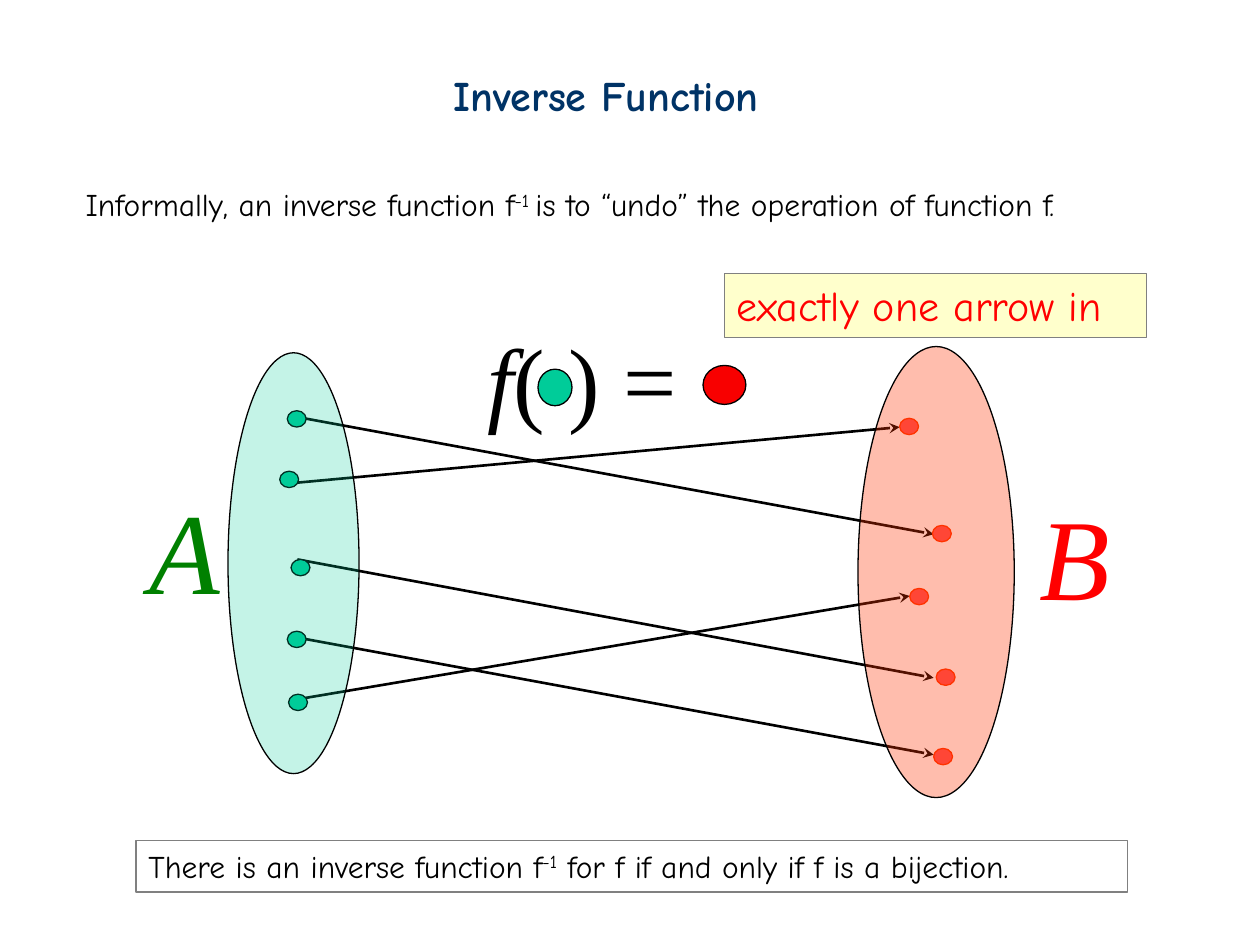
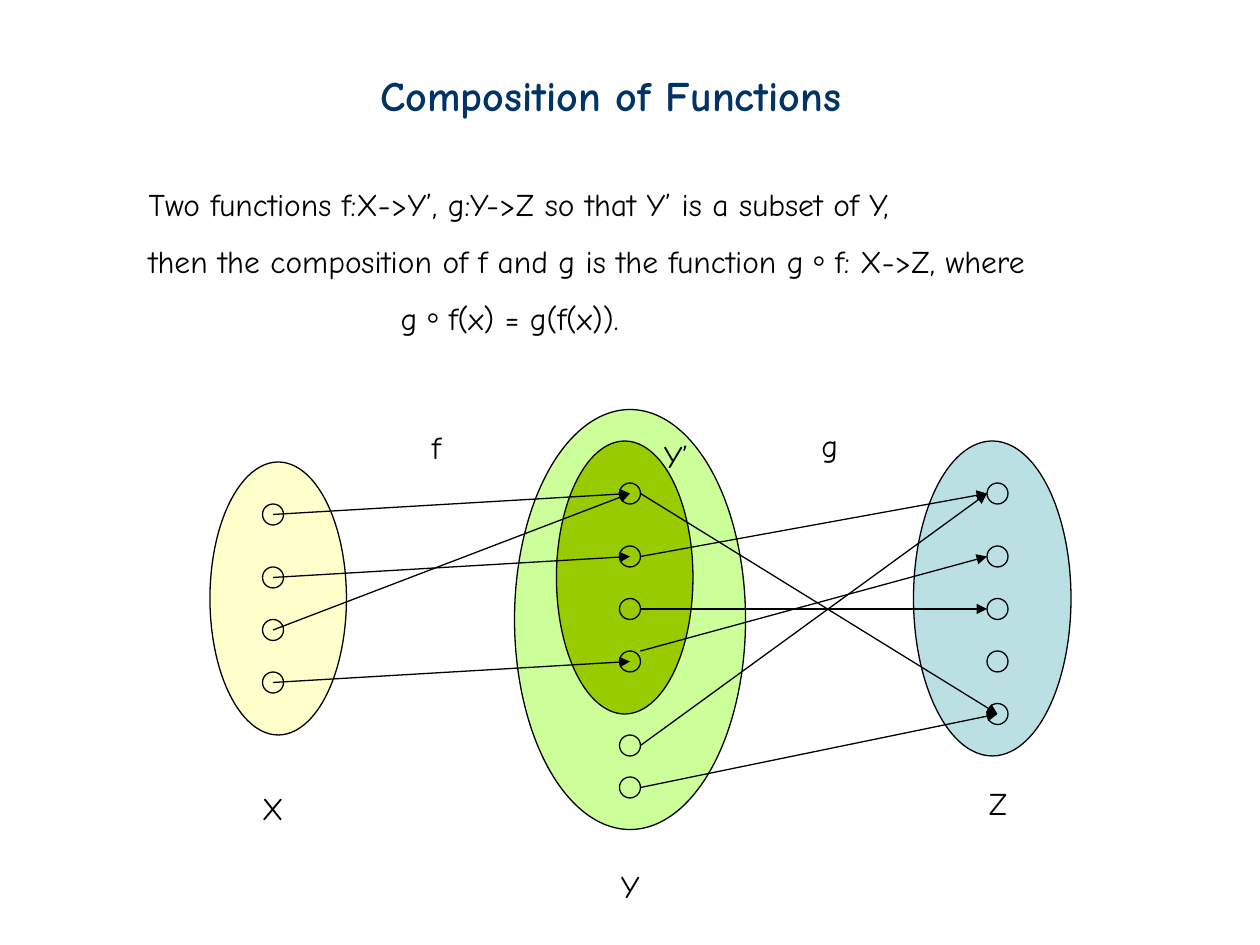
from pptx import Presentation
from pptx import util as u
from pptx.dml.color import RGBColor
from pptx.enum import shapes, text
from pptx.oxml.ns import qn
from lxml import etree

# ---- Shared look ----
COLORS = {
    "ink": "000000", "title": "003366", "edge": "808080", "note": "FFFFCC",
    "red": "FF0000", "value": "F80000", "dot_b": "FF5050", "set_b": "FF3300",
    "green": "008000", "set_a": "00CC99",
    "x": "FFFFCC", "y": "CCFF99", "y_sub": "99CC00", "z": "BBE0E3",
}
FONT, MATH = "Comic Neue", "Times New Roman"
BODY = {"name": FONT, "size": 18, "color": "ink"}
TITLE = {"name": FONT, "size": 24, "color": "title", "bold": True}
CALLOUT = {"name": FONT, "size": 24, "color": "red"}
FORMULA = {"name": MATH, "size": 54, "color": "ink"}
SET_NAME = {"name": MATH, "size": 66, "italic": True}
SUP = {"baseline": 30000}

# ---- Slide 1 content (inches) ----
INVERSE = {
    "title": "Inverse Function", "title_at": (3.5, 0.5, 2.88, 0.5),
    "body_at": (0.58, 1.42, 8.8, 0.4),
    "body": [{"runs": [("Informally, an inverse function f", {}), ("-1 ", SUP),
                       ("is to “undo” the operation of function f.", {})]}],
}
MAPPINGS = [((2.36, 3.31), (7.41, 4.24)), ((2.26, 3.84), (7.14, 3.39)),
            ((2.36, 4.44), (7.41, 5.38)), ((2.36, 5.06), (7.41, 5.99)),
            ((2.36, 5.55), (7.22, 4.73))]
DOT = (0.15, 0.13)
DOTS_A = [(2.28, 3.26), (2.22, 3.74), (2.31, 4.44), (2.28, 5.01), (2.29, 5.51)]
DOTS_B = [(7.14, 3.32), (7.22, 4.67), (7.4, 4.17), (7.43, 5.31), (7.41, 5.94)]
SETS_AB = [((1.81, 2.8, 1.04, 3.34), "set_a", 23), ((6.81, 2.75, 1.24, 3.58), "set_b", 32)]
NAMES_AB = [("A", (1.09, 3.75, 0.76, 1.2), "green"), ("B", (8.15, 3.8, 0.76, 1.2), "red")]
FORMULA_DOTS = [((4.27, 2.93, 0.27, 0.29), "set_a"), ((5.58, 2.9, 0.34, 0.31), "value")]
THEOREM = [("There is an inverse function f", {}), ("-1", SUP),
           (" for f if and only if f is a bijection.", {})]

# ---- Slide 2 content (diagram in grid cells, 12 to the inch) ----
COMPOSITION = {
    "title": "Composition of Functions", "title_at": (2.92, 0.5, 4.17, 0.5),
    "body_at": (1.08, 1.42, 7.78, 1.3),
    "body": [
        {"runs": [("Two functions f:X->Y’, g:Y->Z so that Y’ is a subset of Y,", {})]},
        {"runs": [("then the composition of f and g is the function g。f: X->Z, where", {})],
         "spacing": 1.5},
        {"runs": [("g。f(x) = g(f(x)).", {})], "spacing": 1.5, "indent": 2},
    ],
}
CELL = 12
SETS_XYZ = [("y", (49, 39, 22, 40)), ("x", (20, 44, 13, 26)),
            ("y_sub", (53, 42, 13, 26)), ("z", (87, 42, 15, 30))]
COLUMNS = {"x": (25, [48, 54, 59, 64]), "y": (59, [46, 52, 57, 62, 70, 74]),
           "z": (94, [46, 52, 57, 62, 67])}
F_ARROWS = [(0, 0), (1, 1), (2, 0), (3, 3)]
G_ARROWS = [(0, 4), (1, 0), (2, 2), (3, 1), (4, 0), (5, 4)]
LABELS = [("X", (1.98, 6.21, 0.38)), ("Y", (4.83, 6.83, 0.36)), ("Z", (7.75, 6.17, 0.38)),
          ("Y’", (5.17, 3.42, 0.4)), ("f", (3.33, 3.35, 0.33)), ("g", (6.42, 3.33, 0.33))]


# ---- Helpers ----
def rgb(name):
    return RGBColor.from_string(COLORS[name])


def place(sp, at):
    for side, value in zip(("left", "top", "width", "height"), at):
        setattr(sp, side, u.Inches(value))


def add_runs(p, runs, base):
    for words, extra in runs:
        r = p.add_run()
        r.text = words
        for key, value in {**base, **extra}.items():
            if key == "color":
                r.font.color.rgb = rgb(value)
            elif key == "baseline":
                r._r.get_or_add_rPr().set("baseline", str(value))
            else:
                setattr(r.font, key, u.Pt(value) if key == "size" else value)
        if "。" in words:  # the composition sign is a centred full-width circle
            r._r.get_or_add_rPr().set("lang", "zh-TW")


def write(sp, paragraphs, base, wrap=True):
    tf = sp.text_frame
    frame = {"word_wrap": wrap, "vertical_anchor": text.MSO_ANCHOR.TOP,
             "auto_size": text.MSO_AUTO_SIZE.NONE if wrap
             else text.MSO_AUTO_SIZE.SHAPE_TO_FIT_TEXT}
    for key, value in frame.items():
        setattr(tf, key, value)
    for i, item in enumerate(paragraphs):
        p = tf.add_paragraph() if i else tf.paragraphs[0]
        form = {"alignment": text.PP_ALIGN.LEFT, "space_before": u.Pt(0),
                "line_spacing": item.get("spacing", 1.0)}
        for key, value in form.items():
            setattr(p, key, value)
        pPr = p._p.get_or_add_pPr()
        pPr.set("marL", str(u.Inches(item.get("indent", 0))))
        pPr.set("indent", "0")
        etree.SubElement(pPr, qn("a:buNone"))
        add_runs(p, item["runs"], base)


def add_text(s, at, runs, base, wrap=True):
    sp = s.shapes.add_textbox(*map(u.Inches, at))
    write(sp, [{"runs": runs}], base, wrap)


def add_figure(s, kind, at, fill=None, line="ink", alpha=None):
    sp = s.shapes.add_shape(kind, *map(u.Inches, at))
    sp.shadow.inherit = False
    sp.line.color.rgb = rgb(line)
    sp.line.width = u.Pt(0.75)
    if fill:
        sp.fill.solid()
        sp.fill.fore_color.rgb = rgb(fill)
    else:
        sp.fill.background()
    if alpha:
        color = sp._element.spPr.find(qn("a:solidFill"))[0]
        etree.SubElement(color, qn("a:alpha"), val=str(alpha * 1000))
    return sp


def add_oval(s, *args, **kwargs):
    return add_figure(s, shapes.MSO_SHAPE.OVAL, *args, **kwargs)


def add_box(s, at, runs, base, fill=None):
    sp = add_figure(s, shapes.MSO_SHAPE.RECTANGLE, at, fill, "edge")
    write(sp, [{"runs": runs}], base)


def add_arrow(s, start, end, width, head):
    c = s.shapes.add_connector(shapes.MSO_CONNECTOR.STRAIGHT, *map(u.Inches, (*start, *end)))
    c.line.color.rgb = rgb("ink")
    c.line.width = u.Pt(width)
    etree.SubElement(c.line._get_or_add_ln(), qn("a:tailEnd"), type=head)
    etree.SubElement(c._element.spPr, qn("a:effectLst"))


def start_slide(prs, content):
    s = prs.slides.add_slide(prs.slide_layouts[1])
    title, body = s.placeholders
    place(title, content["title_at"])
    write(title, [{"runs": [(content["title"], {})]}], TITLE)
    place(body, content["body_at"])
    write(body, content["body"], BODY)
    return s


# ---- Slides ----
def inverse_slide(prs):
    s = start_slide(prs, INVERSE)
    for start, end in MAPPINGS:
        add_arrow(s, start, end, 1.5, "stealth")
    for dots, fill, line in ((DOTS_A, "set_a", "ink"), (DOTS_B, "dot_b", "set_b")):
        for corner in dots:
            add_oval(s, corner + DOT, fill, line)
    for at, fill, alpha in SETS_AB:
        add_oval(s, at, fill, alpha=alpha)
    for name, at, color in NAMES_AB:
        add_text(s, at, [(name, {"color": color})], SET_NAME, wrap=False)
    # Formula with dots standing for the argument and its value
    add_text(s, (3.77, 2.5, 2.46, 1), [("f", {"italic": True}), ("( ) =", {})], FORMULA)
    for at, fill in FORMULA_DOTS:
        add_oval(s, at, fill)
    add_box(s, (5.75, 2.17, 3.35, 0.51), [("exactly one arrow in", {})], CALLOUT, "note")
    add_box(s, (1.08, 6.67, 7.87, 0.41), THEOREM, BODY)


def composition_slide(prs):
    s = start_slide(prs, COMPOSITION)

    def cells(*values):
        return tuple(v / CELL for v in values)

    for fill, at in SETS_XYZ:
        add_oval(s, cells(*at), fill)
    for left, tops in COLUMNS.values():
        for top in tops:
            add_oval(s, cells(left, top, 2, 2))
    (x_left, xs), (y_left, ys), (z_left, zs) = COLUMNS.values()
    # f runs from centre to centre
    for i, j in F_ARROWS:
        add_arrow(s, cells(x_left + 1, xs[i] + 1), cells(y_left + 1, ys[j] + 1),
                  0.75, "triangle")
    # g runs from right edge to left edge; the last Z dot is hit at its centre
    for i, j in G_ARROWS:
        rise = 0 if i == 3 else 1
        reach = 1 if j == len(zs) - 1 else 0
        add_arrow(s, cells(y_left + 2, ys[i] + rise), cells(z_left + reach, zs[j] + 1),
                  0.75, "triangle")
    for name, at in LABELS:
        add_text(s, at + (0.4,), [(name, {})], BODY, wrap=False)


def main():
    prs = Presentation()
    prs.slide_width, prs.slide_height = u.Inches(10), u.Inches(7.5)
    inverse_slide(prs)
    composition_slide(prs)
    prs.save("out.pptx")


if __name__ == "__main__":
    main()
